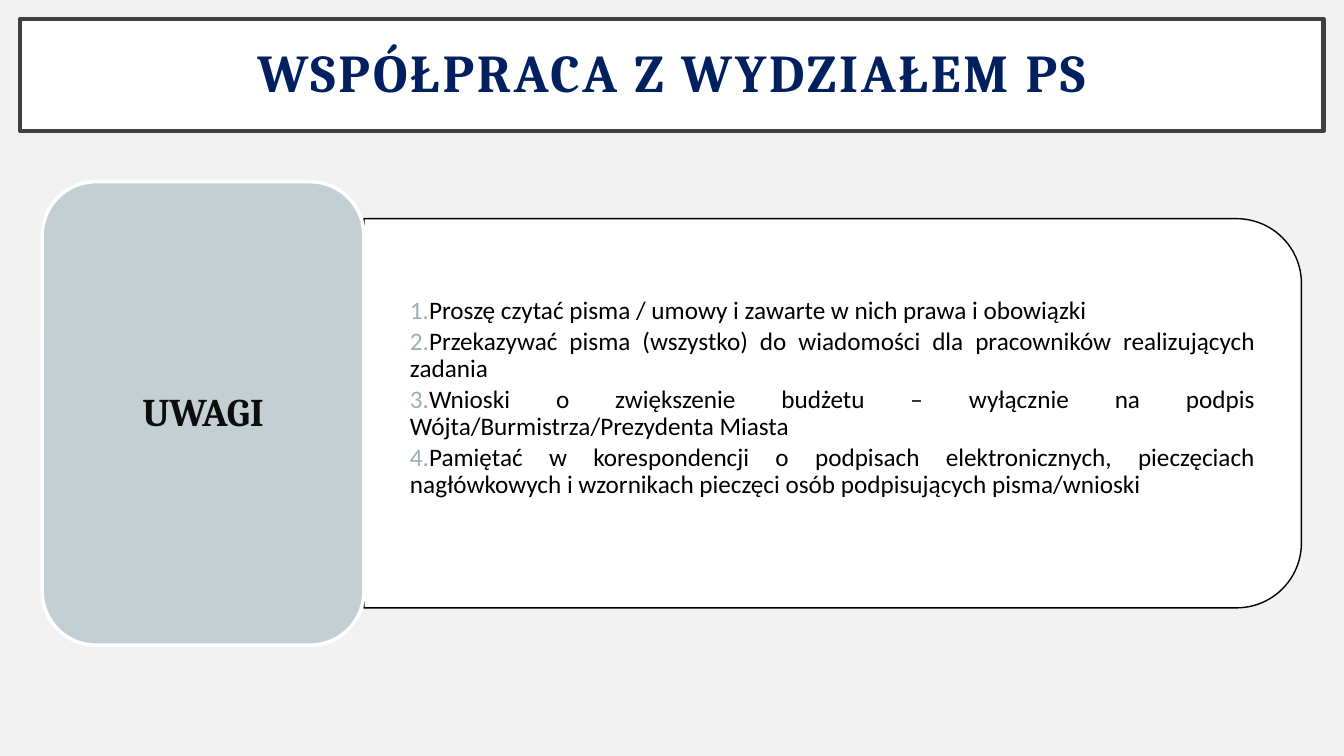
"""Build the slide with remarks on working with the PS department."""
from dataclasses import dataclass

from lxml import etree
from pptx import Presentation
from pptx.dml.color import RGBColor
from pptx.enum.shapes import MSO_SHAPE as SHAPE
from pptx.enum.text import MSO_ANCHOR as ANCHOR, PP_ALIGN as ALIGN
from pptx.oxml.ns import qn
from pptx.util import Pt


@dataclass(frozen=True)
class Theme:
    background: str = "F2F2F2"
    panel: str = "FFFFFF"
    title_line: str = "404040"
    title_text: str = "002060"
    panel_line: str = "000000"
    label_fill: str = "C3CFD3"
    label_text: str = "0D0D0D"
    number: str = "9BAFB5"
    body_text: str = "000000"
    heading_font: str = "Cambria"
    body_font: str = "Calibri"
    title_size: int = 38
    label_size: int = 28
    body_size: int = 18


T = Theme()
RGB = RGBColor.from_string
REMARKS = [
    "Proszę czytać pisma / umowy i zawarte w nich prawa i obowiązki",
    "Przekazywać pisma (wszystko) do wiadomości dla pracowników realizujących zadania",
    "Wnioski o zwiększenie budżetu – wyłącznie na podpis Wójta/Burmistrza/Prezydenta Miasta",
    "Pamiętać w korespondencji o podpisach elektronicznych, pieczęciach nagłówkowych "
    "i wzornikach pieczęci osób podpisujących pisma/wnioski",
]


def add_box(kind, box, fill, line, weight):
    sp = s.shapes.add_shape(kind, *map(Pt, box))
    sp.shadow.inherit = False
    sp.fill.solid()
    sp.fill.fore_color.rgb = RGB(fill)
    sp.line.color.rgb = RGB(line)
    sp.line.width = Pt(weight)
    return sp


def style(p, align, font, size, color, bold=False):
    p.alignment = align
    p.line_spacing = 0.9
    f = p.runs[0].font
    f.name, f.size, f.bold = font, Pt(size), bold
    f.color.rgb = RGB(color)


prs = Presentation()
prs.slide_width, prs.slide_height = Pt(960), Pt(540)
s = prs.slides.add_slide(prs.slide_layouts[6])
s.background.fill.solid()
s.background.fill.fore_color.rgb = RGB(T.background)

title = add_box(SHAPE.RECTANGLE, (14.4, 13.6, 931, 80), T.panel, T.title_line, 3)
tf = title.text_frame
tf.word_wrap = True
tf.vertical_anchor = ANCHOR.MIDDLE
tf.text = "WSPÓŁPRACA Z WYDZIAŁEM PS"
p = tf.paragraphs[0]
style(p, ALIGN.CENTER, T.heading_font, T.title_size, T.title_text, True)
p.runs[0]._r.get_or_add_rPr().set("spc", "200")

panel = add_box(SHAPE.ROUND_2_SAME_RECTANGLE, (455.8, -39.6, 278, 669.6),
                T.panel, T.panel_line, 1)
panel.rotation = 90

remarks = s.shapes.add_textbox(Pt(260), Pt(170), Pt(656), Pt(251))
tf = remarks.text_frame
tf.word_wrap = True
tf.vertical_anchor = ANCHOR.MIDDLE
tf.margin_left = tf.margin_right = Pt(19.4)
tf.margin_top, tf.margin_bottom = Pt(10), Pt(32)
tf.text = "\n".join(REMARKS)
for p in tf.paragraphs:
    style(p, ALIGN.JUSTIFY, T.body_font, T.body_size, T.body_text)
    p.level = 1
    p.space_after = Pt(2.7)
    pPr = p._p.get_or_add_pPr()
    pPr.set("marL", str(Pt(13.5)))
    pPr.set("indent", "0")
    color = etree.SubElement(pPr, qn("a:buClr"))
    etree.SubElement(color, qn("a:srgbClr"), val=T.number)
    etree.SubElement(pPr, qn("a:buFont"), typeface="+mj-lt")
    etree.SubElement(pPr, qn("a:buAutoNum"), type="arabicPeriod")

label = add_box(SHAPE.ROUNDED_RECTANGLE, (30.2, 129.8, 229.7, 331),
                T.label_fill, T.panel, 2.5)
tf = label.text_frame
tf.word_wrap = True
tf.vertical_anchor = ANCHOR.MIDDLE
tf.text = "UWAGI"
style(tf.paragraphs[0], ALIGN.CENTER, T.heading_font, T.label_size, T.label_text, True)

prs.save("out.pptx")
